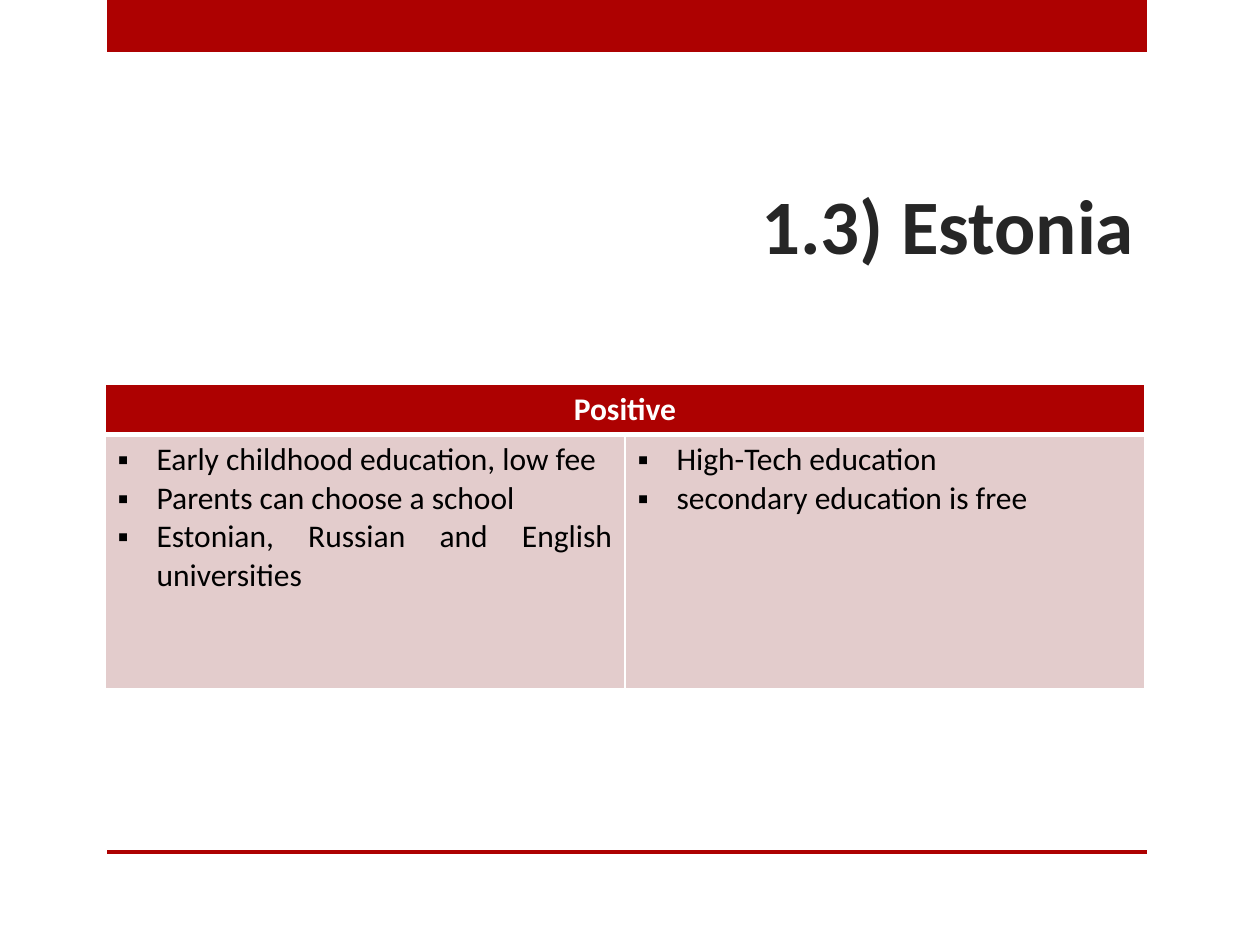
"""Build the Estonia slide with its table of positive points."""
from lxml import etree
from pptx import Presentation, util as u
from pptx.dml.color import RGBColor
from pptx.enum import shapes, text
from pptx.oxml import ns

PX = 914400 / 126
THEME = {
    "font": "Calibri", "red": "AD0101", "pink": "E3CCCC", "dark": "262626",
    "white": "FFFFFF", "black": "000000", "head": 44, "body": 18,
}
TITLE = "1.3) Estonia"
HEAD = "Positive"
POINTS = [
    ["Early childhood education, low fee", "Parents can choose a school",
     "Estonian, Russian and English universities"],
    ["High-Tech education", "secondary education is free"],
]
BARS = [(107, 0, 1040, 52), (107, 850, 1040, 4)]
TITLE_BOX = (105, 55, 1042, 221)
GRID_BOX = (105, 384, 1040, 304)
ROWS = [50, 254]
INDENT = 39


def emu(px):
    return u.Emu(round(px * PX))


def place(box):
    return [emu(px) for px in box]


def paint(item, name):
    item.fill.solid()
    item.fill.fore_color.rgb = RGBColor.from_string(THEME[name])


def write(par, words, size, color, align, bold=False):
    par.alignment = align
    run = par.add_run()
    run.text = words
    font = run.font
    font.name, font.size, font.bold = THEME["font"], u.Pt(THEME[size]), bold
    font.color.rgb = RGBColor.from_string(THEME[color])


def bullet(par):
    props = par._p.get_or_add_pPr()
    props.set("marL", str(emu(INDENT)))
    props.set("indent", str(emu(-INDENT)))
    etree.SubElement(props, ns.qn("a:buFont"), typeface="Arial")
    etree.SubElement(props, ns.qn("a:buChar"), char="▪")


def border(cell, base=1):
    props = cell._tc.get_or_add_tcPr()
    for spot, side in enumerate("LRTB"):
        width = base if side == "B" else 1
        line = etree.Element(ns.qn("a:ln" + side), w=str(u.Pt(width)))
        fill = etree.SubElement(line, ns.qn("a:solidFill"))
        etree.SubElement(fill, ns.qn("a:srgbClr"), val=THEME["white"])
        props.insert(spot, line)


def main():
    deck = Presentation()
    deck.slide_width, deck.slide_height = u.Inches(10), u.Inches(7.5)
    slide = deck.slides.add_slide(deck.slide_layouts[6])

    for box in BARS:
        bar = slide.shapes.add_shape(shapes.MSO_SHAPE.RECTANGLE, *place(box))
        bar.shadow.inherit = False
        bar.line.fill.background()
        paint(bar, "red")

    frame = slide.shapes.add_textbox(*place(TITLE_BOX)).text_frame
    frame.word_wrap = True
    frame.vertical_anchor = text.MSO_ANCHOR.BOTTOM
    write(frame.paragraphs[0], TITLE, "head", "dark", text.PP_ALIGN.RIGHT, True)

    grid = slide.shapes.add_table(len(ROWS), len(POINTS), *place(GRID_BOX)).table
    grid.horz_banding = False
    for row, tall in zip(grid.rows, ROWS):
        row.height = emu(tall)

    for cell in grid.rows[0].cells:
        paint(cell, "red")
        border(cell, 3)
    top = grid.cell(0, 0)
    top.merge(grid.cell(0, len(POINTS) - 1))
    write(top.text_frame.paragraphs[0], HEAD, "body", "white",
          text.PP_ALIGN.CENTER, True)

    for cell, points in zip(grid.rows[1].cells, POINTS):
        paint(cell, "pink")
        border(cell)
        frame = cell.text_frame
        for spot, words in enumerate(points):
            par = frame.add_paragraph() if spot else frame.paragraphs[0]
            write(par, words, "body", "black", text.PP_ALIGN.JUSTIFY)
            bullet(par)

    deck.save("out.pptx")


if __name__ == "__main__":
    main()
